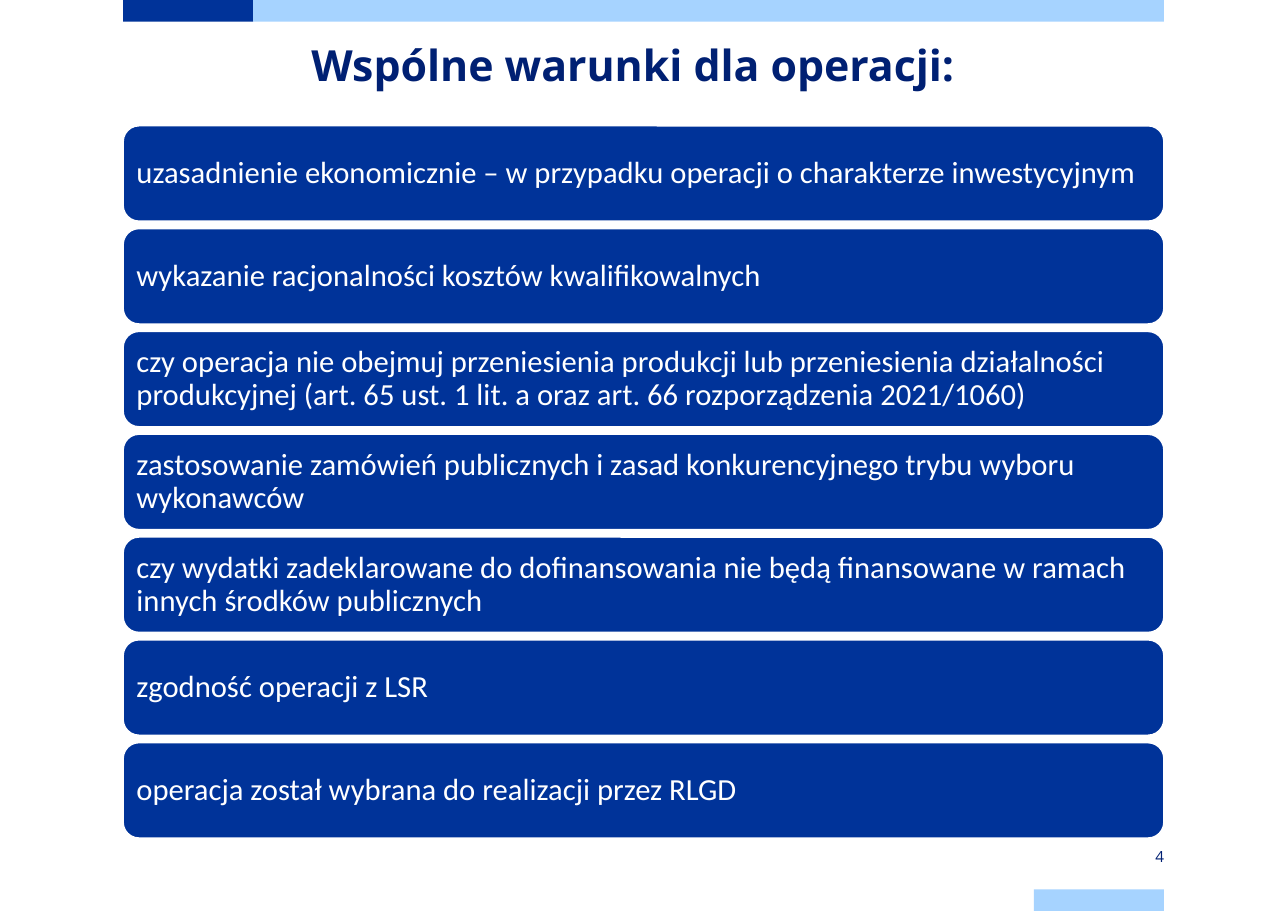
from pptx import Presentation
from pptx.dml.color import RGBColor
from pptx.enum.shapes import MSO_SHAPE
from pptx.enum.text import MSO_ANCHOR, PP_ALIGN
from pptx.util import Cm, Pt

COLORS = {"blue": "003399", "light": "A6D3FF", "navy": "002073", "white": "FFFFFF"}

CONDITIONS = [
    "uzasadnienie ekonomicznie – w przypadku operacji o charakterze inwestycyjnym",
    "wykazanie racjonalności kosztów kwalifikowalnych",
    "czy operacja nie obejmuj przeniesienia produkcji lub przeniesienia działalności "
    "produkcyjnej (art. 65 ust. 1 lit. a oraz art. 66 rozporządzenia 2021/1060)",
    "zastosowanie zamówień publicznych i zasad konkurencyjnego trybu wyboru wykonawców",
    "czy wydatki zadeklarowane do dofinansowania nie będą finansowane w ramach "
    "innych środków publicznych",
    "zgodność operacji z LSR",
    "operacja został wybrana do realizacji przez RLGD",
]

LEFT, WIDTH = 2.84, 24
BAR_WIDTH, BAR_HEIGHT = 3, 0.5


def add_filled(kind, left, top, width, height, color):
    shape = slide.shapes.add_shape(kind, Cm(left), Cm(top), Cm(width), Cm(height))
    shape.shadow.inherit = False
    shape.fill.solid()
    shape.fill.fore_color.rgb = RGBColor.from_string(COLORS[color])
    shape.line.fill.background()
    return shape


def write(shape, text, font, size, color, align, inset_x, inset_y, bold=False):
    frame = shape.text_frame
    frame.text = text
    frame.word_wrap = True
    frame.vertical_anchor = MSO_ANCHOR.MIDDLE
    frame.margin_left = frame.margin_right = Cm(inset_x)
    frame.margin_top = frame.margin_bottom = Cm(inset_y)
    paragraph = frame.paragraphs[0]
    paragraph.alignment = align
    run_font = paragraph.runs[0].font
    run_font.name = font
    run_font.size = Pt(size)
    run_font.bold = bold
    run_font.color.rgb = RGBColor.from_string(COLORS[color])
    return paragraph


presentation = Presentation()
presentation.slide_width = Cm(29.7)
presentation.slide_height = Cm(21)
slide = presentation.slides.add_slide(presentation.slide_layouts[6])

# Bars at the top and bottom edges
right_bar = LEFT + WIDTH - BAR_WIDTH
for left, top, width, color in [
    (LEFT, 0, BAR_WIDTH, "blue"),
    (LEFT + BAR_WIDTH, 0, WIDTH - BAR_WIDTH, "light"),
    (right_bar, 21 - BAR_HEIGHT, BAR_WIDTH, "light"),
]:
    add_filled(MSO_SHAPE.RECTANGLE, left, top, width, BAR_HEIGHT, color)

# Title
title = slide.shapes.add_textbox(Cm(LEFT), Cm(0.69), Cm(23.5), Cm(1.5))
paragraph = write(title, "Wspólne warunki dla operacji:", "Open Sans", 28, "navy",
                  PP_ALIGN.CENTER, 0, 0, bold=True)
paragraph.line_spacing = Pt(36)

# Conditions
for index, condition in enumerate(CONDITIONS):
    box = add_filled(MSO_SHAPE.ROUNDED_RECTANGLE, LEFT, 2.9 + index * 2.37, WIDTH, 2.2, "blue")
    box.line.color.rgb = RGBColor.from_string(COLORS["white"])
    box.line.width = Pt(1)
    paragraph = write(box, condition, "Calibri", 20, "white", PP_ALIGN.LEFT, 0.2, 0.2)
    paragraph.line_spacing = 0.9

# Page number
number = slide.shapes.add_textbox(Cm(right_bar), Cm(19.5), Cm(BAR_WIDTH), Cm(0.5))
write(number, "4", "Open Sans", 10, "navy", PP_ALIGN.RIGHT, 0, 0)

presentation.save("out.pptx")
